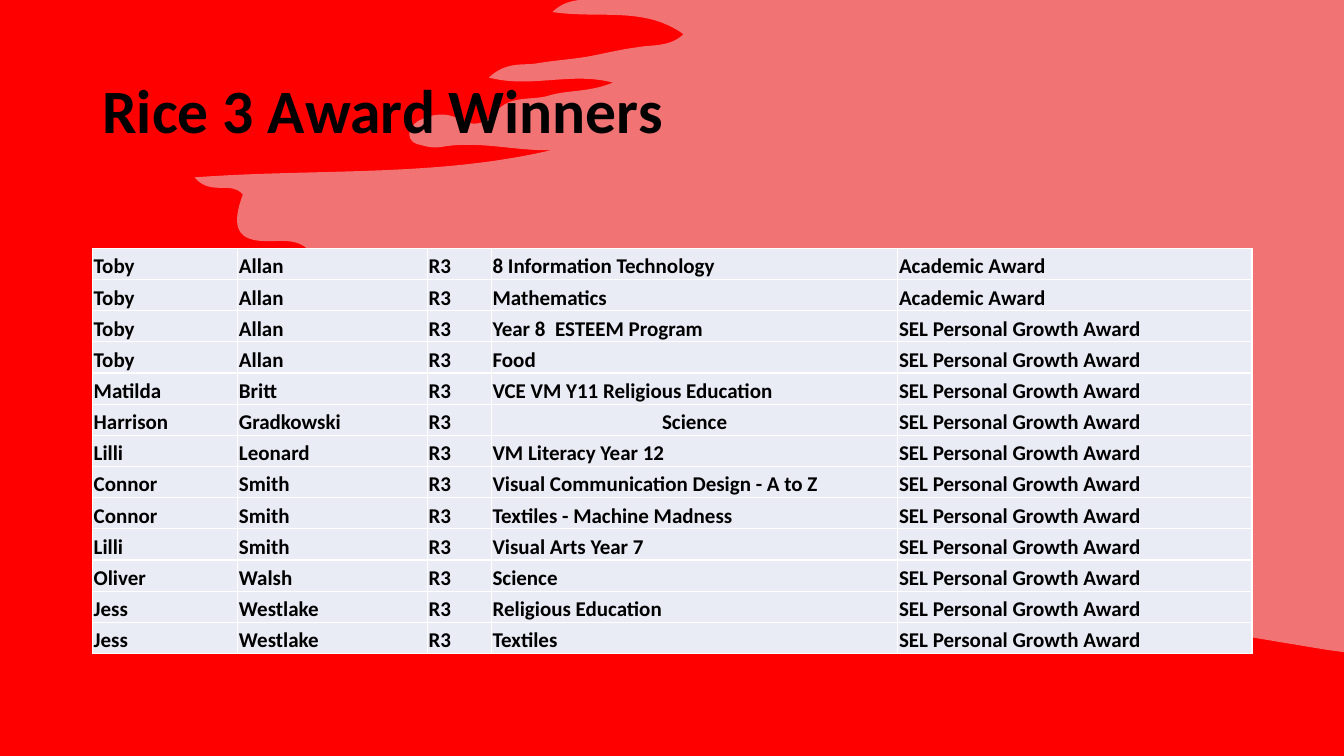
from dataclasses import dataclass

from lxml.etree import SubElement
from pptx import Presentation
from pptx.dml.color import RGBColor
from pptx.enum.text import MSO_ANCHOR as Anchor, PP_ALIGN as Align
from pptx.oxml.ns import qn
from pptx.util import Cm, Pt


@dataclass(frozen=True)
class Theme:
    font: str = "Calibri"
    background: str = "FF0000"
    splash: str = "E7E6E6"
    splash_opacity: int = 50
    cell: str = "E9EBF5"
    border: str = "FFFFFF"
    text: str = "000000"
    title_size: int = 44
    cell_size: int = 15
    border_width: int = 1


THEME = Theme()
CM_PER_INCH = 2.54

# Torn edge in inches: each row holds two control points and an end point
EDGE_START = (5.75, 0)
EDGE_CURVES = [
    (5.67, 0.01, 5.57, 0.03, 5.48, 0.12),
    (5.95, 0.19, 6.39, 0.06, 6.78, 0.34),
    (6.64, 0.47, 6.48, 0.44, 6.32, 0.47),
    (6.16, 0.49, 6, 0.53, 5.84, 0.56),
    (5.67, 0.59, 5.49, 0.6, 5.32, 0.63),
    (5.18, 0.65, 5.02, 0.61, 4.85, 0.77),
    (5.27, 0.88, 5.66, 0.71, 6.08, 0.82),
    (5.84, 0.92, 5.63, 0.89, 5.44, 0.95),
    (5.27, 1, 5.06, 0.94, 4.92, 1.11),
    (4.81, 1.24, 4.69, 1.26, 4.55, 1.18),
    (4.42, 1.11, 4.28, 1.13, 4.15, 1.2),
    (4.11, 1.23, 4.06, 1.26, 4.06, 1.32),
    (4.06, 1.41, 4.12, 1.43, 4.18, 1.44),
    (4.24, 1.46, 4.31, 1.47, 4.37, 1.46),
    (4.74, 1.39, 5.1, 1.5, 5.47, 1.49),
    (4.31, 1.76, 3.14, 1.67, 1.93, 1.76),
    (2.09, 1.95, 2.29, 1.79, 2.41, 1.93),
    (2.3, 2.22, 2.34, 2.37, 2.58, 2.39),
    (2.8, 2.41, 3.04, 2.31, 3.16, 2.65),
    (3.2, 2.76, 3.41, 2.73, 3.55, 2.75),
    (3.84, 2.79, 4.14, 2.75, 4.42, 2.88),
    (4.53, 2.93, 4.6, 2.97, 4.55, 3.11),
    (4.49, 3.25, 4.56, 3.3, 4.66, 3.36),
    (4.73, 3.4, 4.83, 3.39, 4.89, 3.52),
    (4.28, 3.5, 3.69, 3.4, 3.09, 3.5),
    (3.75, 3.74, 4.47, 3.73, 5.12, 4.02),
    (5.1, 4.12, 4.95, 4.07, 4.94, 4.22),
    (5.28, 4.38, 5.69, 4.27, 6.05, 4.5),
    (5.84, 4.61, 5.65, 4.44, 5.45, 4.54),
    (5.52, 4.69, 8.4, 5.61, 8.92, 5.71),
    (9.78, 5.87, 11.95, 6.25, 13.18, 6.45),
]
RIGHT_CORNERS = [(13.33, 6.47), (13.33, 0)]

HOUSE = "R3"
ACADEMIC = "Academic Award"
GROWTH = "SEL Personal Growth Award"
CENTRED_CELL = (5, 3)
WINNERS = [
    ("Toby", "Allan", "8 Information Technology", ACADEMIC),
    ("Toby", "Allan", "Mathematics", ACADEMIC),
    ("Toby", "Allan", "Year 8  ESTEEM Program", GROWTH),
    ("Toby", "Allan", "Food", GROWTH),
    ("Matilda", "Britt", "VCE VM Y11 Religious Education", GROWTH),
    ("Harrison", "Gradkowski", "Science", GROWTH),
    ("Lilli", "Leonard", "VM Literacy Year 12", GROWTH),
    ("Connor", "Smith", "Visual Communication Design - A to Z", GROWTH),
    ("Connor", "Smith", "Textiles - Machine Madness", GROWTH),
    ("Lilli", "Smith", "Visual Arts Year 7", GROWTH),
    ("Oliver", "Walsh", "Science", GROWTH),
    ("Jess", "Westlake", "Religious Education", GROWTH),
    ("Jess", "Westlake", "Textiles", GROWTH),
]
COLUMN_WIDTHS = [3.66, 4.78, 1.61, 10.24, 8.92]
TABLE_HEIGHT = 10.21


def set_format(target, values):
    for name, value in values.items():
        setattr(target, name, value)


def paint(fill, color):
    fill.solid()
    fill.fore_color.rgb = RGBColor.from_string(color)


def write(paragraph, text, size):
    run = paragraph.add_run()
    run.text = text
    set_format(run.font, {"name": THEME.font, "size": Pt(size), "bold": True})
    run.font.color.rgb = RGBColor.from_string(THEME.text)


def to_length(point):
    return tuple(Cm(value * CM_PER_INCH) for value in point)


def bend_segments(shape, curves):
    """Turn the first straight segments of a freeform into cubic curves."""
    segments = list(shape.element.spPr.iter(qn("a:lnTo")))
    for segment, curve in zip(segments, curves):
        bend = segment.makeelement(qn("a:cubicBezTo"), {})
        for start in (0, 2, 4):
            x, y = to_length(curve[start:start + 2])
            SubElement(bend, qn("a:pt"), x=str(x - shape.left), y=str(y - shape.top))
        segment.getparent().replace(segment, bend)


def add_splash(slide):
    corners = [curve[4:] for curve in EDGE_CURVES] + RIGHT_CORNERS
    builder = slide.shapes.build_freeform(*to_length(EDGE_START))
    builder.add_line_segments([to_length(corner) for corner in corners], close=True)
    shape = builder.convert_to_shape()
    bend_segments(shape, EDGE_CURVES)
    shape.shadow.inherit = False
    shape.line.fill.background()
    paint(shape.fill, THEME.splash)
    color = shape.element.spPr.find(qn("a:solidFill"))[0]
    SubElement(color, qn("a:alpha"), val=str(THEME.splash_opacity * 1000))


def add_title(slide, text):
    box = slide.shapes.add_textbox(Cm(2.33), Cm(1.01), Cm(29.21), Cm(3.68))
    set_format(box.text_frame, {"word_wrap": True, "vertical_anchor": Anchor.MIDDLE})
    paragraph = box.text_frame.paragraphs[0]
    paragraph.line_spacing = 0.9
    write(paragraph, text, THEME.title_size)


def add_borders(cell):
    properties = cell._tc.get_or_add_tcPr()
    for index, side in enumerate(("lnL", "lnR", "lnT", "lnB")):
        line = properties.makeelement(qn(f"a:{side}"), {"w": str(Pt(THEME.border_width))})
        fill = SubElement(line, qn("a:solidFill"))
        SubElement(fill, qn("a:srgbClr"), val=THEME.border)
        properties.insert(index, line)


def fill_cell(cell, text, alignment):
    set_format(cell, {
        "margin_left": Cm(0.03), "margin_right": Cm(0.03),
        "margin_top": Cm(0.03), "margin_bottom": 0,
        "vertical_anchor": Anchor.BOTTOM,
    })
    paint(cell.fill, THEME.cell)
    add_borders(cell)
    paragraph = cell.text_frame.paragraphs[0]
    paragraph.alignment = alignment
    write(paragraph, text, THEME.cell_size)


def add_winners_table(slide):
    table = slide.shapes.add_table(
        len(WINNERS), len(COLUMN_WIDTHS),
        Cm(2.33), Cm(6.26), Cm(sum(COLUMN_WIDTHS)), Cm(TABLE_HEIGHT),
    ).table
    set_format(table, {"first_row": False, "horz_banding": False})
    for column, width in zip(table.columns, COLUMN_WIDTHS):
        column.width = Cm(width)
    for row_index, (first, last, subject, award) in enumerate(WINNERS):
        table.rows[row_index].height = Cm(TABLE_HEIGHT / len(WINNERS))
        for column_index, text in enumerate((first, last, HOUSE, subject, award)):
            centred = (row_index, column_index) == CENTRED_CELL
            fill_cell(table.cell(row_index, column_index), text,
                      Align.CENTER if centred else Align.LEFT)


def main():
    presentation = Presentation()
    set_format(presentation, {"slide_width": Cm(33.86), "slide_height": Cm(19.05)})
    slide = presentation.slides.add_slide(presentation.slide_layouts[6])

    # Backdrop
    paint(slide.background.fill, THEME.background)
    add_splash(slide)

    # Content
    add_title(slide, "Rice 3 Award Winners")
    add_winners_table(slide)
    presentation.save("out.pptx")


if __name__ == "__main__":
    main()
